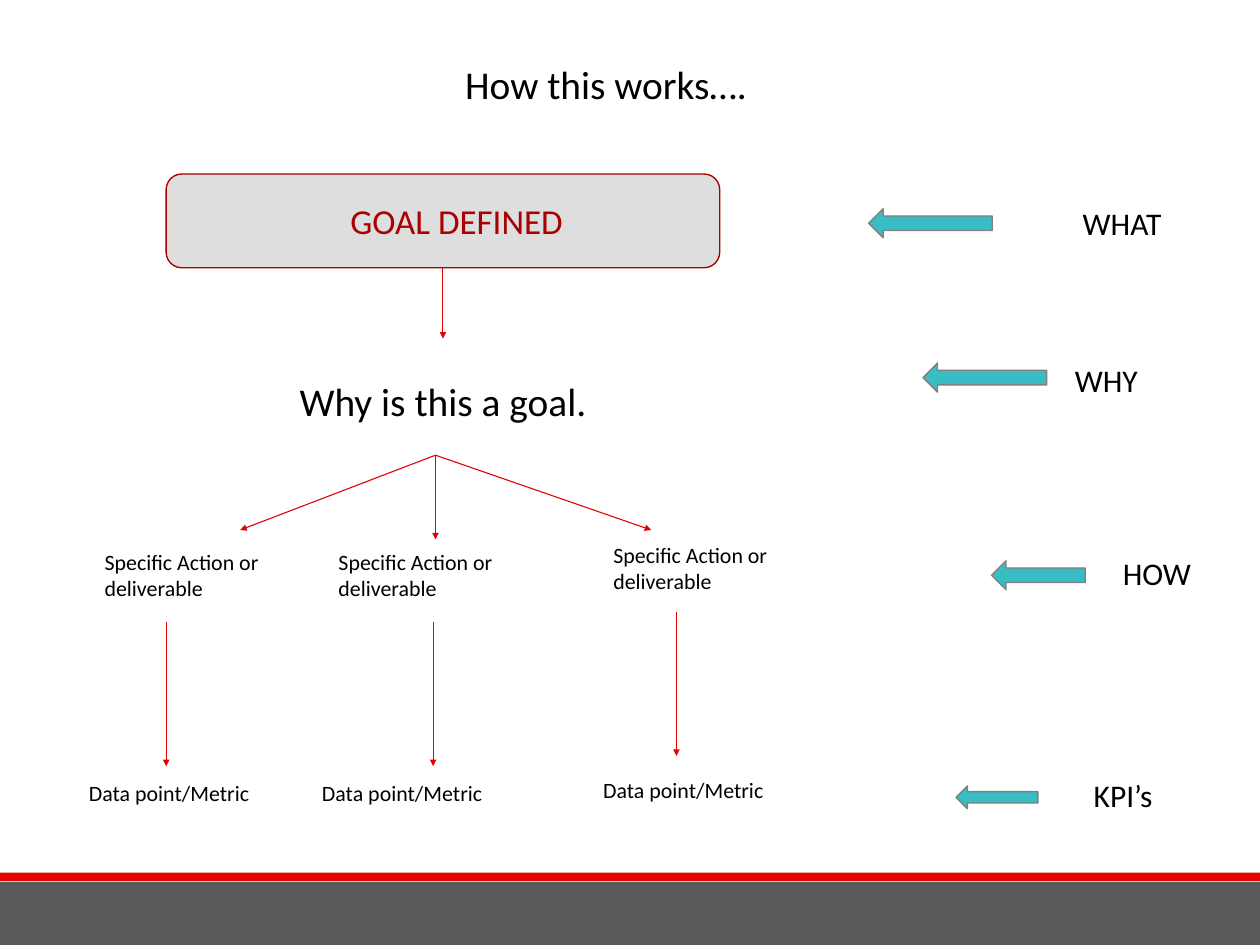
from dataclasses import dataclass

from lxml import etree
from pptx import Presentation
from pptx.dml.color import RGBColor
from pptx.enum import shapes, text
from pptx.oxml import ns
from pptx.util import Inches, Pt


@dataclass(frozen=True)
class Theme:
    font: str = "Calibri"
    black: str = "000000"
    red: str = "E20000"
    goal_text: str = "AA0000"
    goal_line: str = "A70000"
    goal_fill: str = "DEDEDE"
    teal: str = "39BDC4"
    outline: str = "808080"
    footer: str = "595959"
    heading: float = 36
    goal: float = 32
    label: float = 28.8
    body: float = 20


THEME = Theme()
TITLE = ("How this works….", (4.26, 0.71, 6.87, 0.71))
GOAL = ("GOAL DEFINED", (2.11, 2.21, 7.03, 1.19))
REASON = ("Why is this a goal.", (2.19, 4.74, 6.87, 0.71))
ACTION, METRIC = "Specific Action or deliverable", "Data point/Metric"
BRANCH_WIDTH, ACTION_HEIGHT, METRIC_HEIGHT = 2.66, 0.77, 0.44
FORK, DROP = (5.53, 5.78), 1.83
BRANCHES = [
    {"action": (1.23, 6.92), "metric": (1.03, 9.85), "tip": (3.05, 6.73), "drop": (2.11, 7.9)},
    {"action": (4.2, 6.92), "metric": (3.99, 9.85), "tip": (5.53, 6.85), "drop": (5.5, 7.9)},
    {"action": (7.69, 6.83), "metric": (7.56, 9.81), "tip": (8.27, 6.73), "drop": (8.59, 7.77)},
]
STAGES = [
    ("WHAT", (13.65, 2.54, 1.31, 0.59), (11.03, 2.65, 1.57, 0.37)),
    ("WHY", (13.55, 4.54, 1.65, 0.59), (11.72, 4.61, 1.57, 0.37)),
    ("HOW", (14.16, 6.99, 1.33, 0.91), (12.59, 7.12, 1.19, 0.37)),
    ("KPI’s", (13.79, 9.81, 1.61, 0.59), (12.14, 9.98, 1.04, 0.29)),
]
BARS = [((0, 11.2, 16, 0.8), THEME.footer), ((0, 11.08, 16, 0.11), THEME.red)]


def rgb(value):
    return RGBColor.from_string(value)


def write(tf, content, size, color=THEME.black, centered=False, anchor=text.MSO_ANCHOR.TOP):
    tf.word_wrap = True
    tf.auto_size = text.MSO_AUTO_SIZE.NONE
    tf.vertical_anchor = anchor
    p = tf.paragraphs[0]
    p.alignment = text.PP_ALIGN.CENTER if centered else text.PP_ALIGN.LEFT
    r = p.add_run()
    r.text = content
    r.font.name, r.font.size = THEME.font, Pt(size)
    r.font.color.rgb = rgb(color)
    return p


def add_text(slide, content, box, size, centered=False):
    sp = slide.shapes.add_textbox(*map(Inches, box))
    write(sp.text_frame, content, size, centered=centered)


def add_block(slide, kind, box, fill, line=None):
    sp = slide.shapes.add_shape(kind, *map(Inches, box))
    sp.shadow.inherit = False
    sp.fill.solid()
    sp.fill.fore_color.rgb = rgb(fill)
    if line:
        sp.line.color.rgb = rgb(line)
        sp.line.width = Pt(1.25)
    else:
        sp.line.fill.background()
    return sp


def add_arrow(slide, start, end):
    cxn = slide.shapes.add_connector(
        shapes.MSO_CONNECTOR.STRAIGHT, *map(Inches, (*start, *end)))
    cxn.line.color.rgb = rgb(THEME.red)
    cxn.line.width = Pt(1)
    etree.SubElement(cxn.line._get_or_add_ln(), ns.qn("a:tailEnd"), type="triangle")
    etree.SubElement(cxn._element.spPr, ns.qn("a:effectLst"))


def main():
    """Build the goal breakdown slide."""
    prs = Presentation()
    prs.slide_width, prs.slide_height = Inches(16), Inches(12)
    slide = prs.slides.add_slide(prs.slide_layouts[5])

    for box, fill in BARS:
        add_block(slide, shapes.MSO_SHAPE.RECTANGLE, box, fill)

    content, box = TITLE
    title = slide.shapes.title
    title.left, title.top, title.width, title.height = map(Inches, box)
    write(title.text_frame, content, THEME.heading, centered=True)

    content, box = GOAL
    goal = add_block(slide, shapes.MSO_SHAPE.ROUNDED_RECTANGLE, box,
                     THEME.goal_fill, THEME.goal_line)
    p = write(goal.text_frame, content, THEME.goal, THEME.goal_text, True,
              text.MSO_ANCHOR.MIDDLE)
    p._p.get_or_add_pPr().set("marL", str(Inches(0.35)))

    left, top, width, height = box
    center, bottom = left + width / 2, top + height
    add_arrow(slide, (center, bottom), (center, bottom + 0.9))
    add_text(slide, *REASON, THEME.heading, centered=True)

    for branch in BRANCHES:
        x, y = branch["drop"]
        add_arrow(slide, FORK, branch["tip"])
        add_text(slide, ACTION, (*branch["action"], BRANCH_WIDTH, ACTION_HEIGHT), THEME.body)
        add_arrow(slide, (x, y), (x, y + DROP))
        add_text(slide, METRIC, (*branch["metric"], BRANCH_WIDTH, METRIC_HEIGHT), THEME.body)

    for label, label_box, arrow_box in STAGES:
        add_block(slide, shapes.MSO_SHAPE.LEFT_ARROW, arrow_box, THEME.teal, THEME.outline)
        add_text(slide, label, label_box, THEME.label)

    prs.save("out.pptx")


if __name__ == "__main__":
    main()
